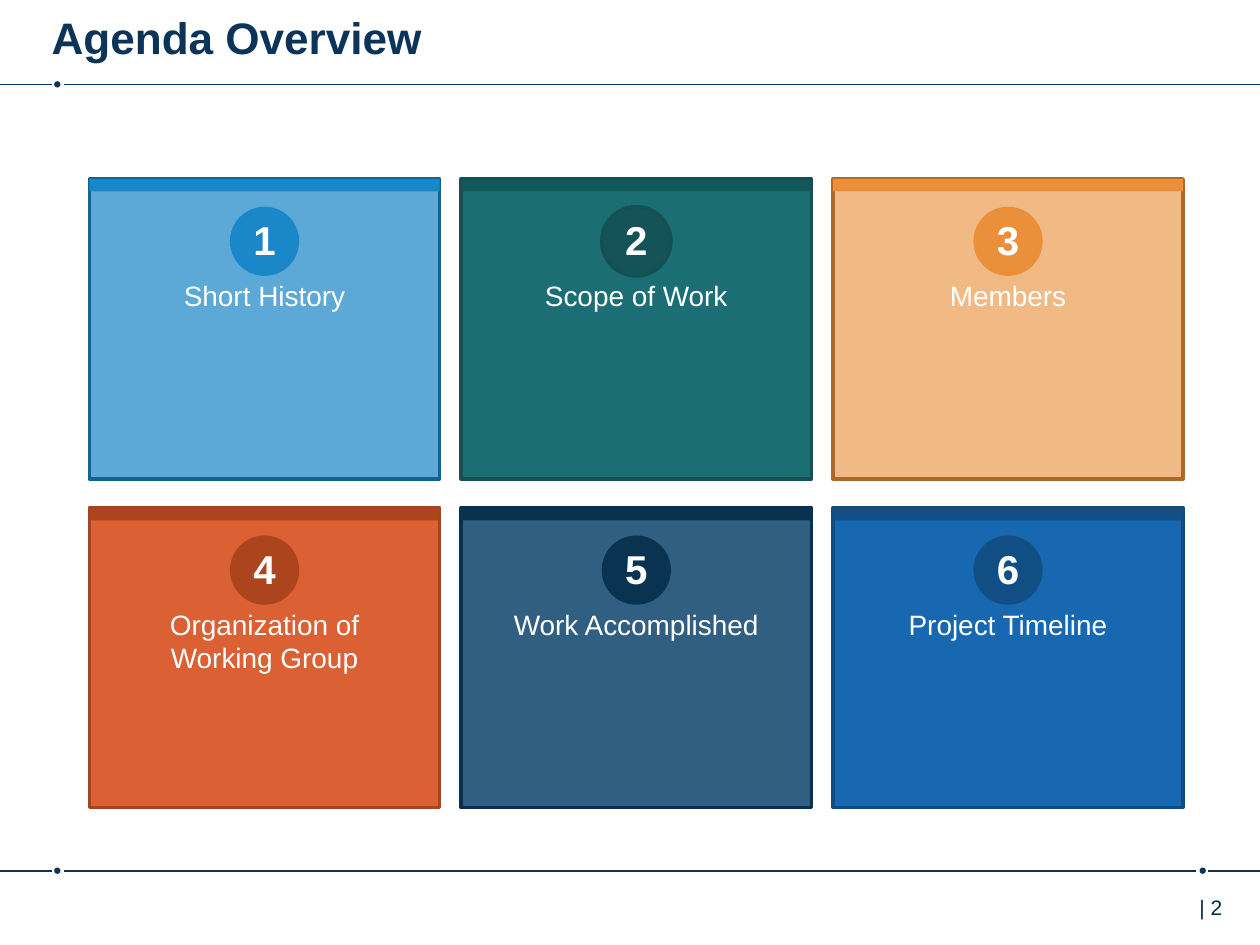
from lxml.etree import SubElement
from pptx import Presentation
from pptx.dml.color import RGBColor
from pptx.enum.shapes import MSO_CONNECTOR, MSO_SHAPE
from pptx.enum.text import MSO_ANCHOR, PP_ALIGN
from pptx.oxml.ns import qn
from pptx.util import Inches, Pt

rgb = RGBColor.from_string
NAVY = RGBColor(0x0B, 0x34, 0x58)
PAGE_INK = RGBColor(0x00, 0x2B, 0x49)
WHITE = RGBColor(0xFF, 0xFF, 0xFF)
FONT = "Arial"

TITLE = "Agenda Overview"
PAGE = "| 2"
# label, (card, opacity), border, (band, opacity), badge, badge border
CARDS = [
    ("Short History", ("1A87C9", 71), "126292", ("1A87C9", 100), "1A87C9", None),
    ("Scope of Work", ("1B6F74", 100), "135154", ("145357", 80), "145357", "135154"),
    ("Members", ("EA903A", 62), "AA692A", ("EA903A", 100), "EA903A", None),
    ("Organization of Working Group", ("DB6033", 100), "9F4625", ("AC441E", 100), "AC441E", None),
    ("Work Accomplished", ("0D436C", 85), "09304E", ("093251", 100), "0A3251", None),
    ("Project Timeline", ("1768B1", 100), "104B81", ("114E85", 100), "114E84", None),
]
RULES = [(0.67, [(0, 0.41), (0.51, 10)], [0.43]),
         (6.91, [(0, 0.41), (0.51, 9.49), (9.59, 10)], [0.43, 9.52])]

COLS = 3
LEFT, TOP = 0.71, 1.42
STEP_X, STEP_Y = 2.95, 2.61
CARD_W, CARD_H, BAND_H = 2.78, 2.38, 0.1
BADGE, LABEL_W, DOT = 0.55, 2.27, 0.05


def add_shape(slide, kind, x, y, w, h, color, opacity=100, border=None):
    sp = slide.shapes.add_shape(kind, Inches(x), Inches(y), Inches(w), Inches(h))
    sp.shadow.inherit = False
    sp.fill.solid()
    sp.fill.fore_color.rgb = color
    if opacity < 100:
        clr = sp.fill._xPr.find(qn("a:solidFill"))[0]
        SubElement(clr, qn("a:alpha"), val=str(opacity * 1000))
    if border:
        sp.line.color.rgb = rgb(border)
        sp.line.width = Pt(2)
    else:
        sp.line.fill.background()


def add_line(slide, x1, x2, y):
    line = slide.shapes.add_connector(
        MSO_CONNECTOR.STRAIGHT, Inches(x1), Inches(y), Inches(x2), Inches(y))
    line.line.color.rgb = NAVY
    line.line.width = Pt(1)
    SubElement(line._element.spPr, qn("a:effectLst"))


def set_text(tf, text, size, color, bold=False, align=PP_ALIGN.LEFT):
    tf.word_wrap = True
    tf.text = text
    p = tf.paragraphs[0]
    p.alignment = align
    p.font.name = FONT
    p.font.size = Pt(size)
    p.font.bold = bold
    p.font.color.rgb = color


def add_text(slide, x, y, w, h, text, size, color, **style):
    box = slide.shapes.add_textbox(Inches(x), Inches(y), Inches(w), Inches(h))
    set_text(box.text_frame, text, size, color, **style)


def add_card(slide, i, label, card, border, band, badge, badge_border):
    row, col = divmod(i, COLS)
    x, y = LEFT + col * STEP_X, TOP + row * STEP_Y
    mid = x + CARD_W / 2
    add_shape(slide, MSO_SHAPE.RECTANGLE, x, y, CARD_W, CARD_H, rgb(card[0]), card[1], border)
    add_shape(slide, MSO_SHAPE.RECTANGLE, x, y, CARD_W, BAND_H, rgb(band[0]), band[1])
    add_shape(slide, MSO_SHAPE.OVAL, mid - BADGE / 2, y + 0.22, BADGE, BADGE, rgb(badge),
              border=badge_border)
    add_text(slide, mid - LABEL_W / 2, y + 0.74, LABEL_W, 1.18, label, 16, WHITE,
             align=PP_ALIGN.CENTER)
    add_text(slide, x, y + 0.24, CARD_W, 0.49, str(i + 1), 23, WHITE,
             bold=True, align=PP_ALIGN.CENTER)


def main():
    prs = Presentation()
    prs.slide_width, prs.slide_height = Inches(10), Inches(7.5)
    slide = prs.slides.add_slide(prs.slide_layouts[5])

    title = slide.shapes.title
    title.left, title.top = Inches(0.41), Inches(0.05)
    title.width, title.height = Inches(8.76), Inches(0.49)
    tf = title.text_frame
    tf.margin_left = tf.margin_right = 0
    tf.vertical_anchor = MSO_ANCHOR.MIDDLE
    set_text(tf, TITLE, 25.2, NAVY, bold=True)

    for y, segments, dots in RULES:
        for x1, x2 in segments:
            add_line(slide, x1, x2, y)
        for x in dots:
            add_shape(slide, MSO_SHAPE.OVAL, x, y - DOT / 2, DOT, DOT, NAVY)
    add_text(slide, 9.42, 7.05, 0.55, 0.4, PAGE, 12, PAGE_INK)

    for i, card in enumerate(CARDS):
        add_card(slide, i, *card)
    prs.save("out.pptx")


if __name__ == "__main__":
    main()
